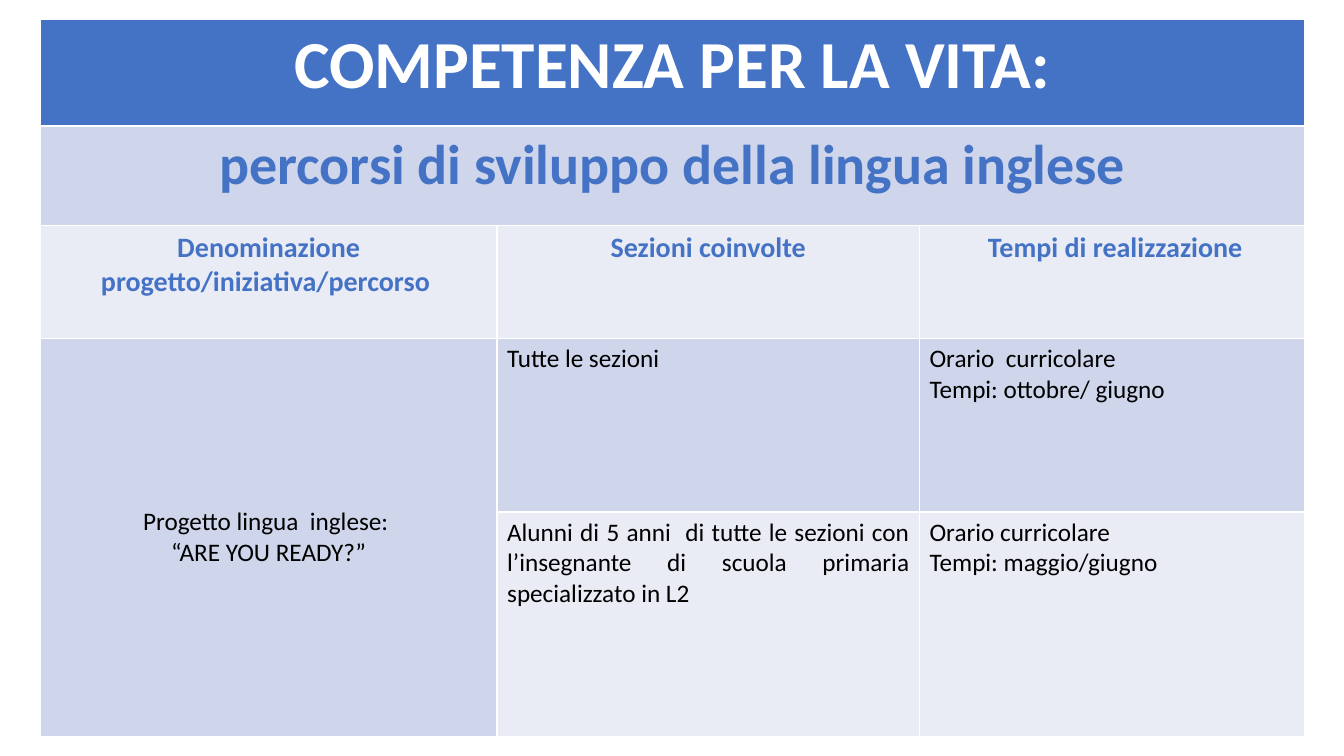
from pptx import Presentation
from pptx.dml.color import RGBColor
from pptx.enum.text import MSO_ANCHOR, PP_ALIGN
from pptx.util import Inches, Pt

BLUE, MID, LIGHT = "4472C4", "CFD5EA", "E9EBF5"
CENTER, JUSTIFY = PP_ALIGN.CENTER, PP_ALIGN.JUSTIFY


def rgb(value):
    return RGBColor.from_string(value)


prs = Presentation()
prs.slide_width, prs.slide_height = Inches(13.33), Inches(7.5)
s = prs.slides.add_slide(prs.slide_layouts[6])

widths = [4.53, 4.19, 3.82]
heights = [1.06, 0.99, 1.12, 1.72, 2.23]
table = s.shapes.add_table(
    len(heights), len(widths), Inches(0.4), Inches(0.19),
    Inches(sum(widths)), Inches(sum(heights))).table
for column, width in zip(table.columns, widths):
    column.width = Inches(width)
for row, height in zip(table.rows, heights):
    row.height = Inches(height)

texts = [
    ["COMPETENZA PER LA VITA:"],
    ["percorsi di sviluppo della lingua inglese"],
    ["Denominazione progetto/iniziativa/percorso ", "Sezioni coinvolte",
     " Tempi di realizzazione"],
    ["Progetto lingua  inglese: \n“ARE YOU READY?”", "Tutte le sezioni",
     "Orario  curricolare\nTempi: ottobre/ giugno"],
    ["", "Alunni di 5 anni  di tutte le sezioni con l’insegnante di scuola "
     "primaria specializzato in L2",
     "Orario curricolare \nTempi: maggio/giugno"],
]
row_styles = [
    (BLUE, 48, "FFFFFF", True, CENTER),
    (MID, 40, BLUE, True, CENTER),
    (LIGHT, 20, BLUE, True, CENTER),
    (MID, 18, "000000", False, JUSTIFY),
    (LIGHT, 18, "000000", False, JUSTIFY),
]

for i, (fill, size, color, bold, align) in enumerate(row_styles):
    for j in range(len(widths)):
        cell = table.cell(i, j)
        cell.fill.solid()
        cell.fill.fore_color.rgb = rgb(fill)
        if j >= len(texts[i]):
            continue
        cell.text_frame.text = texts[i][j]
        for p in cell.text_frame.paragraphs:
            p.alignment = CENTER if j == 0 else align
            for r in p.runs:
                r.font.name = "Calibri"
                r.font.size = Pt(size)
                r.font.bold = bold
                r.font.color.rgb = rgb(color)

for i in range(2):
    table.cell(i, 0).merge(table.cell(i, 2))
project = table.cell(3, 0)
project.merge(table.cell(4, 0))
project.vertical_anchor = MSO_ANCHOR.MIDDLE

prs.save("out.pptx")
